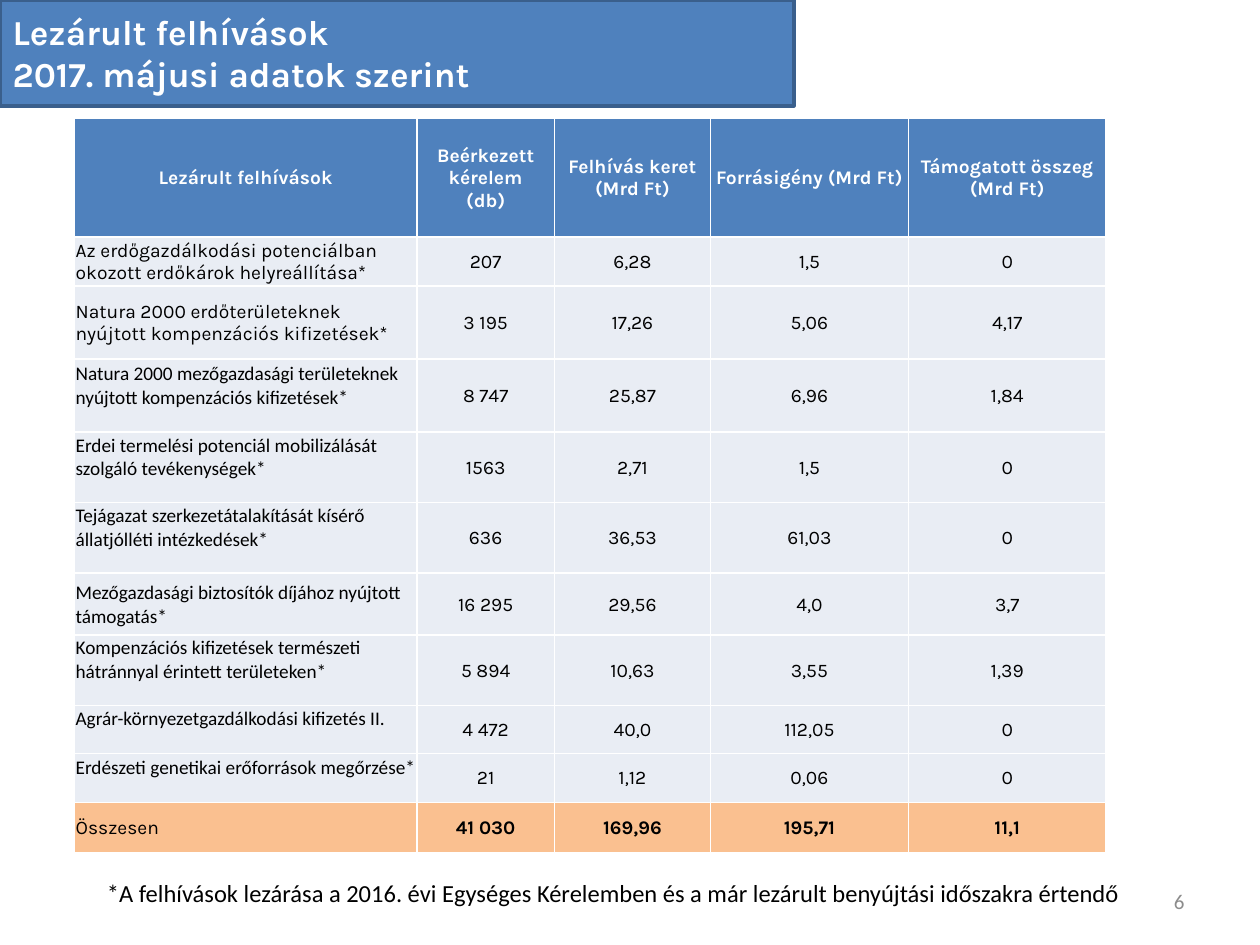
from lxml import etree
from pptx import Presentation
from pptx.dml.color import RGBColor
from pptx.enum.text import MSO_ANCHOR as Anchor, MSO_AUTO_SIZE as AutoSize, PP_ALIGN as Align
from pptx.oxml.ns import qn
from pptx.util import Inches, Pt

COLORS = {
    "blue": "4F81BD", "blue_line": "3A5F8C", "row": "E9EDF4", "total": "FAC090",
    "white": "FFFFFF", "black": "000000", "gray": "8C8C8C",
}

COL_WIDTHS = [2.72, 1.09, 1.24, 1.57, 1.57]
ROW_HEIGHTS = [0.94, 0.39, 0.58, 0.58, 0.56, 0.56, 0.49, 0.56, 0.38, 0.39, 0.4]
HEADER = ["Lezárult felhívások", "Beérkezett kérelem\n(db)", "Felhívás keret\n(Mrd Ft)",
          "Forrásigény (Mrd Ft)", "Támogatott összeg (Mrd Ft)"]
# Label font, gap below the label, then the five values of the row
CALLS = [
    ("Karla", 0, ["Az erdőgazdálkodási potenciálban okozott erdőkárok helyreállítása*",
                  "207", "6,28", "1,5", "0"]),
    ("Karla", 0, ["Natura 2000 erdőterületeknek nyújtott kompenzációs kifizetések*",
                  "3 195", "17,26", "5,06", "4,17"]),
    ("Calibri", 0.17, ["Natura 2000 mezőgazdasági területeknek nyújtott kompenzációs kifizetések*",
                       "8 747", "25,87", "6,96", "1,84"]),
    ("Calibri", 0.17, ["Erdei termelési potenciál mobilizálását szolgáló tevékenységek*",
                       "1563", "2,71", "1,5", "0"]),
    ("Calibri", 0.17, ["Tejágazat szerkezetátalakítását kísérő állatjólléti intézkedések*",
                       "636", "36,53", "61,03", "0"]),
    ("Calibri", 0, ["Mezőgazdasági biztosítók díjához nyújtott támogatás*",
                    "16 295", "29,56", "4,0", "3,7"]),
    ("Calibri", 0.17, ["Kompenzációs kifizetések természeti hátránnyal érintett területeken*",
                       "5 894", "10,63", "3,55", "1,39"]),
    ("Calibri", 0.17, ["Agrár-környezetgazdálkodási kifizetés II.",
                       "4 472", "40,0", "112,05", "0"]),
    ("Calibri", 0.17, ["Erdészeti genetikai erőforrások megőrzése*",
                       "21", "1,12", "0,06", "0"]),
]
TOTAL = ["Összesen", "41 030", "169,96", "195,71", "11,1"]


def rgb(name):
    return RGBColor.from_string(COLORS[name])


class SlideBuilder:
    def __init__(self, slide):
        self.s = slide

    def run(self, p, text, size, font, color="black", bold=False):
        r = p.add_run()
        r.text = text
        r.font.size = Pt(size)
        r.font.name = font
        r.font.bold = bold
        r.font.color.rgb = rgb(color)

    def title(self, lines, left, top, width, height):
        sp = self.s.shapes.title
        sp.left, sp.top, sp.width, sp.height = map(Inches, (left, top, width, height))
        sp.fill.solid()
        sp.fill.fore_color.rgb = rgb("blue")
        sp.line.color.rgb = rgb("blue_line")
        sp.line.width = Pt(2)
        tf = sp.text_frame
        tf.auto_size = AutoSize.NONE
        tf.vertical_anchor = Anchor.MIDDLE
        p = tf.paragraphs[0]
        p.alignment = Align.LEFT
        for i, line in enumerate(lines):
            if i:
                p.add_line_break()
            self.run(p, line, 20, "Karla", "white", True)

    def text(self, text, left, top, width, height, size, color="black",
             align=Align.LEFT, anchor=Anchor.TOP):
        sp = self.s.shapes.add_textbox(*map(Inches, (left, top, width, height)))
        tf = sp.text_frame
        tf.word_wrap = True
        tf.vertical_anchor = anchor
        p = tf.paragraphs[0]
        p.alignment = align
        self.run(p, text, size, "Calibri", color)

    def table(self, left, top, col_widths, row_heights):
        frame = self.s.shapes.add_table(
            len(row_heights), len(col_widths), Inches(left), Inches(top),
            Inches(sum(col_widths)), Inches(sum(row_heights)))
        table = frame.table
        table.horz_banding = False
        for col, width in zip(table.columns, col_widths):
            col.width = Inches(width)
        for row, height in zip(table.rows, row_heights):
            row.height = Inches(height)
        return table

    def borders(self, cell):
        tc_pr = cell._tc.get_or_add_tcPr()
        for side in ("lnL", "lnR", "lnT", "lnB"):
            ln = etree.SubElement(tc_pr, qn(f"a:{side}"), w=str(Pt(1)))
            fill = etree.SubElement(ln, qn("a:solidFill"))
            etree.SubElement(fill, qn("a:srgbClr"), val=COLORS["white"])

    def cell(self, cell, text, fill, align=Align.CENTER, font="Karla",
             color="black", bold=False, gap=0):
        self.borders(cell)
        cell.fill.solid()
        cell.fill.fore_color.rgb = rgb(fill)
        cell.vertical_anchor = Anchor.MIDDLE
        cell.margin_left = cell.margin_right = cell.margin_top = Inches(0.01)
        cell.margin_bottom = Inches(gap)
        tf = cell.text_frame
        for i, line in enumerate(text.split("\n")):
            p = tf.add_paragraph() if i else tf.paragraphs[0]
            p.alignment = align
            self.run(p, line, 11, font, color, bold)

    def row(self, row, values, fill, label_font="Karla", gap=0, bold=False):
        label, *numbers = row.cells
        self.cell(label, values[0], fill, Align.LEFT, label_font, gap=gap)
        for cell, value in zip(numbers, values[1:]):
            self.cell(cell, value, fill, bold=bold)


def main():
    prs = Presentation()
    prs.slide_width, prs.slide_height = Inches(10), Inches(7.5)
    b = SlideBuilder(prs.slides.add_slide(prs.slide_layouts[5]))

    # Title band
    b.title(["Lezárult felhívások", "2017. májusi adatok szerint"], 0, 0, 6.3, 0.84)

    # Table of closed calls
    table = b.table(0.59, 0.94, COL_WIDTHS, ROW_HEIGHTS)
    first, *body, last = table.rows
    for cell, text in zip(first.cells, HEADER):
        b.cell(cell, text, "blue", color="white", bold=True)
    for row, (font, gap, values) in zip(body, CALLS):
        b.row(row, values, "row", font, gap)
    b.row(last, TOTAL, "total", bold=True)

    # Footnote and page number
    b.text("*A felhívások lezárása a 2016. évi Egységes Kérelemben és a már lezárult "
           "benyújtási időszakra értendő", 0.75, 6.92, 8.27, 0.34, 14)
    b.text("6", 7.17, 6.95, 2.33, 0.4, 12, "gray", Align.RIGHT, Anchor.MIDDLE)

    prs.save("out.pptx")


if __name__ == "__main__":
    main()
